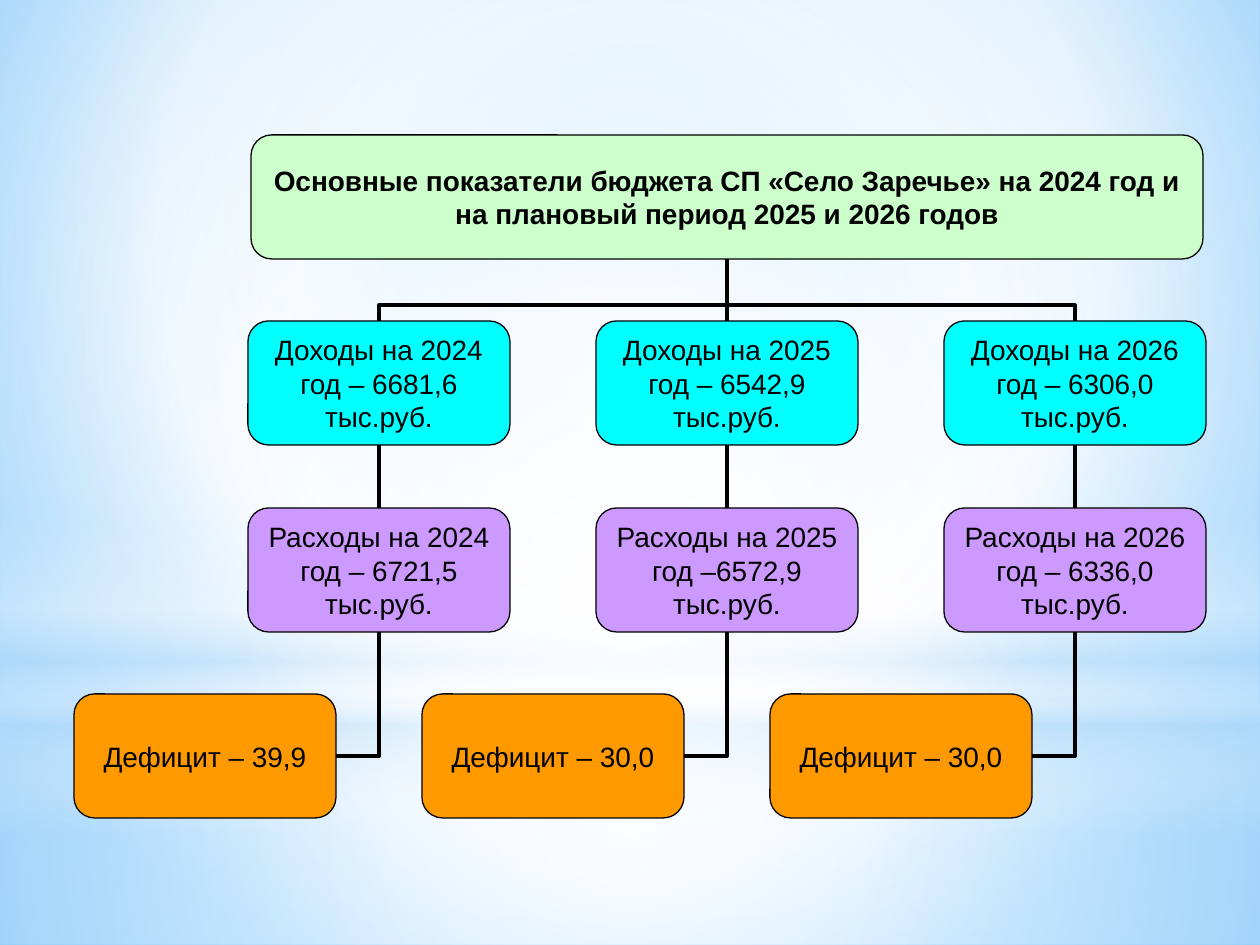
from lxml.etree import SubElement
from pptx import Presentation
from pptx.dml.color import RGBColor
from pptx.enum.shapes import MSO_CONNECTOR, MSO_SHAPE
from pptx.enum.text import MSO_ANCHOR, PP_ALIGN
from pptx.oxml.ns import qn
from pptx.util import Emu, Pt

SLIDE_WIDTH, SLIDE_HEIGHT = 1260, 945
BLACK = RGBColor(0x00, 0x00, 0x00)
WHITE = RGBColor(0xFF, 0xFF, 0xFF)
PALE_BLUE = RGBColor(0xB4, 0xDC, 0xFA)
SKY_BLUE = RGBColor(0x9E, 0xD5, 0xFF)
DEEP_BLUE = RGBColor(0x5B, 0xB9, 0xFF)
GREEN = RGBColor(0xCC, 0xFF, 0xCC)
CYAN = RGBColor(0x00, 0xFF, 0xFF)
VIOLET = RGBColor(0xCC, 0x99, 0xFF)
ORANGE = RGBColor(0xFF, 0x99, 0x00)
CENTER = (50, 50, 50, 50)
TITLE = ("Основные показатели бюджета СП «Село Заречье» на 2024 год и "
         "на плановый период 2025 и 2026 годов")
YEARS = [
    ("Доходы на 2024 год – 6681,6 тыс.руб.",
     "Расходы на 2024 год – 6721,5 тыс.руб.", "Дефицит – 39,9"),
    ("Доходы на 2025 год – 6542,9 тыс.руб.",
     "Расходы на 2025 год –6572,9 тыс.руб.", "Дефицит – 30,0"),
    ("Доходы на 2026 год – 6306,0 тыс.руб.",
     "Расходы на 2026 год – 6336,0 тыс.руб.", "Дефицит – 30,0"),
]


def px(length):
    """Turn pixels into EMU."""
    return Emu(round(length * 914400 / 126))


def set_gradient(fill, element, stops, focus=None):
    """Give a fill a circular gradient around focus, or a vertical one without it."""
    fill.solid()
    solid = next(element.iter(qn("a:solidFill")))
    gradient = solid.makeelement(qn("a:gradFill"), {"rotWithShape": "1"})
    stop_list = SubElement(gradient, qn("a:gsLst"))
    for position, color, opacity in stops:
        stop = SubElement(stop_list, qn("a:gs"), pos=str(position * 1000))
        tone = SubElement(stop, qn("a:srgbClr"), val=str(color))
        if opacity < 100:
            SubElement(tone, qn("a:alpha"), val=str(opacity * 1000))
    if focus:
        circle = SubElement(gradient, qn("a:path"), path="circle")
        sides = {side: str(share * 1000) for side, share in zip("ltrb", focus)}
        SubElement(circle, qn("a:fillToRect"), sides)
    else:
        SubElement(gradient, qn("a:lin"), ang="5400000", scaled="0")
    solid.getparent().replace(solid, gradient)


def add_glow(slide, kind, top, height, stops, focus=None):
    """Add a full-width translucent backdrop shape."""
    shape = slide.shapes.add_shape(kind, 0, px(top), px(SLIDE_WIDTH), px(height))
    shape.shadow.inherit = False
    set_gradient(shape.fill, shape._element, stops, focus)
    shape.line.fill.background()


def add_backdrop(slide):
    """Paint the sky-like background."""
    set_gradient(slide.background.fill, slide._element,
                 [(0, SKY_BLUE, 100), (60, WHITE, 100), (100, DEEP_BLUE, 100)],
                 (20, 10, 20, 60))
    add_glow(slide, MSO_SHAPE.RECTANGLE, 703, 242,
             [(0, WHITE, 91), (37, WHITE, 76), (100, PALE_BLUE, 79)], CENTER)
    add_glow(slide, MSO_SHAPE.RECTANGLE, 0, 703,
             [(0, WHITE, 89), (48, WHITE, 62), (100, PALE_BLUE, 79)], CENTER)
    add_glow(slide, MSO_SHAPE.RECTANGLE, 519, 315,
             [(0, WHITE, 0), (29, WHITE, 30), (45, PALE_BLUE, 40),
              (55, WHITE, 26), (65, PALE_BLUE, 60), (100, WHITE, 0)])
    add_glow(slide, MSO_SHAPE.OVAL, 220, 703,
             [(0, WHITE, 100), (56, WHITE, 0)], CENTER)


def add_box(slide, left, top, width, height, color, text, bold=False):
    """Add a rounded box with centred text."""
    shape = slide.shapes.add_shape(MSO_SHAPE.ROUNDED_RECTANGLE,
                                   px(left), px(top), px(width), px(height))
    shape.shadow.inherit = False
    shape.fill.solid()
    shape.fill.fore_color.rgb = color
    shape.line.color.rgb = BLACK
    shape.line.width = Pt(0.75)
    frame = shape.text_frame
    frame.word_wrap = True
    frame.vertical_anchor = MSO_ANCHOR.MIDDLE
    frame.margin_left = frame.margin_top = frame.margin_right = frame.margin_bottom = 0
    paragraph = frame.paragraphs[0]
    paragraph.alignment = PP_ALIGN.CENTER
    run = paragraph.add_run()
    run.text = text
    run.font.name = "Arial"
    run.font.size = Pt(16)
    run.font.bold = bold
    run.font.color.rgb = BLACK
    return shape


def join(slide, kind, start, start_side, end, end_side):
    """Join two boxes with a black connector."""
    connector = slide.shapes.add_connector(kind, 0, 0, 0, 0)
    connector.begin_connect(start, start_side)
    connector.end_connect(end, end_side)
    connector.line.color.rgb = BLACK
    connector.line.width = Pt(2.25)
    SubElement(connector._element.spPr, qn("a:effectLst"))
    return connector


def join_corner(slide, deficit, expense):
    """Join a deficit to the expense above it with a single bend."""
    connector = join(slide, MSO_CONNECTOR.ELBOW, deficit, 3, expense, 2)
    connector._element.spPr.find(qn("a:prstGeom")).set("prst", "bentConnector2")


def join_branch(slide, income, header):
    """Join an income box to the header, leaving vertically with two bends."""
    connector = join(slide, MSO_CONNECTOR.ELBOW, income, 0, header, 2)
    to_left = connector.begin_x > connector.end_x
    left, top = connector.left, connector.top
    width, height = connector.width, connector.height
    connector.left = left + (width - height) // 2
    connector.top = top + (height - width) // 2
    connector.width, connector.height = height, width
    properties = connector._element.spPr
    transform = properties.find(qn("a:xfrm"))
    transform.set("rot", str((90 if to_left else 270) * 60000))
    transform.set("flipH", "1" if to_left else "0")
    transform.set("flipV", "0")
    adjustments = properties.find(qn("a:prstGeom")).find(qn("a:avLst"))
    SubElement(adjustments, qn("a:gd"), name="adj1", fmla="val 25400")


def add_year(slide, left, top, header, texts):
    """Add one year's income, expense and deficit and join them to the header."""
    width, height = 262, 124
    income_text, expense_text, deficit_text = texts
    income = add_box(slide, left, top, width, height, CYAN, income_text)
    expense = add_box(slide, left, top + 187, width, height, VIOLET, expense_text)
    deficit = add_box(slide, left - 174, top + 373, width, height, ORANGE, deficit_text)
    if income.left + income.width // 2 == header.left + header.width // 2 or \
            abs(income.left + income.width // 2 - header.left - header.width // 2) < px(1):
        join(slide, MSO_CONNECTOR.STRAIGHT, income, 0, header, 2)
    else:
        join_branch(slide, income, header)
    join(slide, MSO_CONNECTOR.STRAIGHT, expense, 0, income, 2)
    join_corner(slide, deficit, expense)


def add_chart_of_budget(slide, left, top):
    """Add the header and a column of boxes for each year."""
    header = add_box(slide, left + 3, top, 952, 124, GREEN, TITLE, bold=True)
    for index, texts in enumerate(YEARS):
        add_year(slide, left + 348 * index, top + 186, header, texts)


def main():
    """Build and save the presentation."""
    presentation = Presentation()
    presentation.slide_width = px(SLIDE_WIDTH)
    presentation.slide_height = px(SLIDE_HEIGHT)
    slide = presentation.slides.add_slide(presentation.slide_layouts[6])
    add_backdrop(slide)
    add_chart_of_budget(slide, 248, 135)
    presentation.save("out.pptx")


if __name__ == "__main__":
    main()
